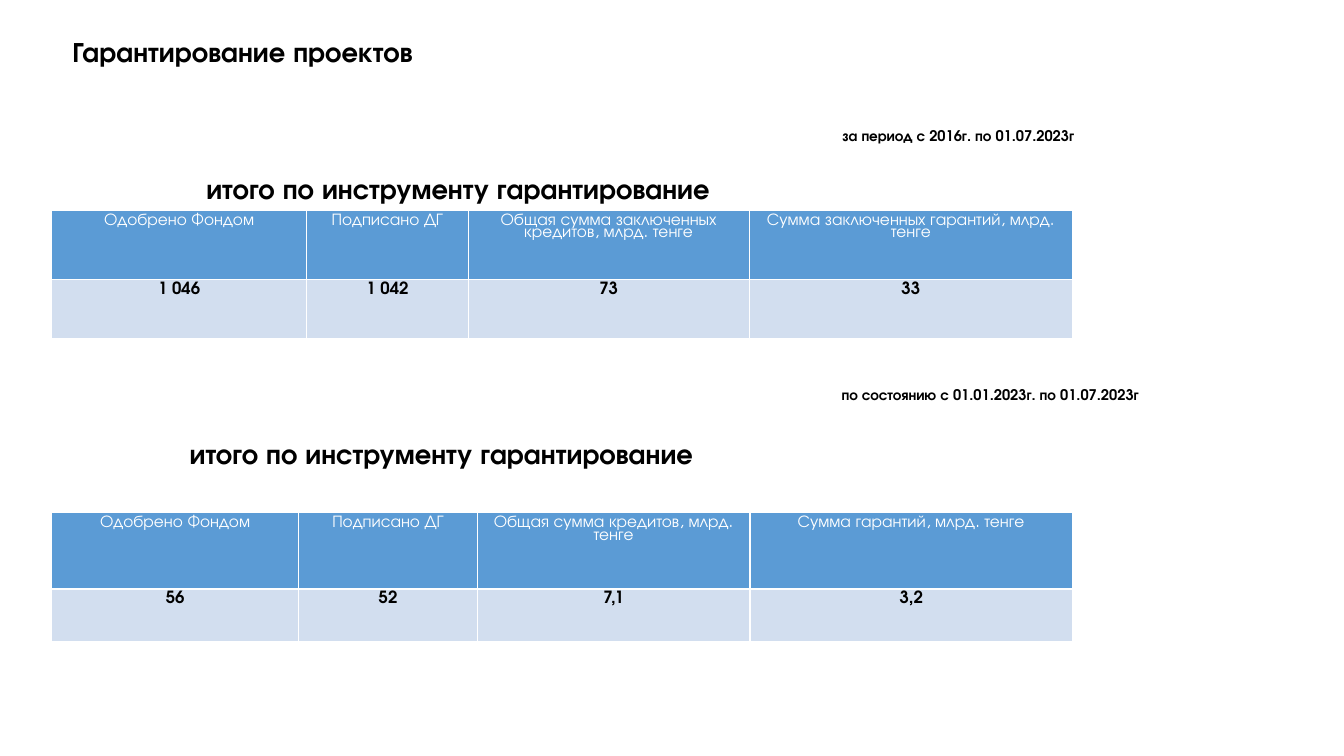
from dataclasses import dataclass

from lxml.etree import SubElement as Sub
from pptx import Presentation
from pptx.dml.color import RGBColor as Rgb
from pptx.enum.text import MSO_ANCHOR as Anchor, MSO_AUTO_SIZE as Fit, PP_ALIGN as Align
from pptx.oxml.ns import qn
from pptx.util import Cm, Pt

FONT = "TeX Gyre Adventor"
HUES = {"text": "000000", "white": "FFFFFF", "head": "5B9BD5", "body": "D2DEEF"}
EDGES = ("a:lnL", "a:lnR", "a:lnT", "a:lnB")
LEFT = 1.3


@dataclass
class Label:
    text: str
    left: float
    top: float
    width: float
    height: float
    size: float


@dataclass
class Grid:
    top: float
    widths: list[float]
    heights: list[float]
    rows: list[list[str]]


TITLE = Label("Гарантирование проектов", 1.57, 0.74, 12.17, 1.12, 20)
LABELS = [
    Label("за период с 2016г. по 01.07.2023г", 20.98, 3.07, 8.1, 0.71, 10.5),
    Label("итого по инструменту гарантирование", 4.95, 4.19, 14.83, 1.12, 20),
    Label("по состоянию с 01.01.2023г. по 01.07.2023г", 20.96, 9.6, 8.61, 0.71, 10.5),
    Label("итого по инструменту гарантирование", 4.53, 10.87, 17.1, 1.12, 20),
]
GRIDS = [
    Grid(5.3, [6.43, 4.07, 7.08, 8.15], [1.75, 1.49], [
        ["Одобрено Фондом", "Подписано ДГ",
         "Общая сумма заключенных кредитов, млрд. тенге",
         "Сумма заключенных гарантий, млрд. тенге"],
        ["1 046", "1 042", "73", "33"],
    ]),
    Grid(12.92, [6.23, 4.5, 6.87, 8.13], [1.92, 1.32], [
        ["Одобрено Фондом", "Подписано ДГ",
         "Общая сумма кредитов, млрд. тенге",
         "Сумма гарантий, млрд. тенге"],
        ["56", "52", "7,1", "3,2"],
    ]),
]


def style(part, size: float, hue: str, bold: bool, align: Align) -> None:
    """Format every run of a paragraph."""
    part.alignment = align
    for run in part.runs:
        font = run.font
        font.name, font.size, font.bold = FONT, Pt(size), bold
        font.color.rgb = Rgb.from_string(HUES[hue])


def fill_label(shape, label: Label) -> None:
    shape.left, shape.top = Cm(label.left), Cm(label.top)
    shape.width, shape.height = Cm(label.width), Cm(label.height)
    frame = shape.text_frame
    frame.text = label.text
    frame.word_wrap = True
    frame.auto_size = Fit.NONE
    frame.vertical_anchor = Anchor.TOP
    style(frame.paragraphs[0], label.size, "text", True, Align.LEFT)


def add_edges(cell) -> None:
    props = cell._tc.get_or_add_tcPr()
    for edge in EDGES:
        line = Sub(props, qn(edge), w=str(Pt(1)))
        Sub(Sub(line, qn("a:solidFill")), qn("a:srgbClr"), val=HUES["white"])


def fill_cell(cell, text: str, head: bool) -> None:
    add_edges(cell)
    cell.fill.solid()
    cell.fill.fore_color.rgb = Rgb.from_string(HUES["head" if head else "body"])
    cell.text_frame.text = text
    part = cell.text_frame.paragraphs[0]
    part.line_spacing = 0.8
    style(part, 12, "white" if head else "text", not head, Align.CENTER)


def add_grid(slide, grid: Grid) -> None:
    table = slide.shapes.add_table(
        len(grid.rows), len(grid.widths), Cm(LEFT), Cm(grid.top),
        Cm(sum(grid.widths)), Cm(sum(grid.heights))).table
    for col, width in zip(table.columns, grid.widths):
        col.width = Cm(width)
    for row, height, texts in zip(table.rows, grid.heights, grid.rows):
        row.height = Cm(height)
        for cell, text in zip(row.cells, texts):
            fill_cell(cell, text, texts is grid.rows[0])


def main() -> None:
    deck = Presentation()
    deck.slide_width, deck.slide_height = Cm(33.87), Cm(19.05)
    slide = deck.slides.add_slide(deck.slide_layouts[5])
    fill_label(slide.shapes.title, TITLE)
    for label in LABELS:
        fill_label(slide.shapes.add_textbox(0, 0, 0, 0), label)
    for grid in GRIDS:
        add_grid(slide, grid)
    deck.save("out.pptx")


if __name__ == "__main__":
    main()
